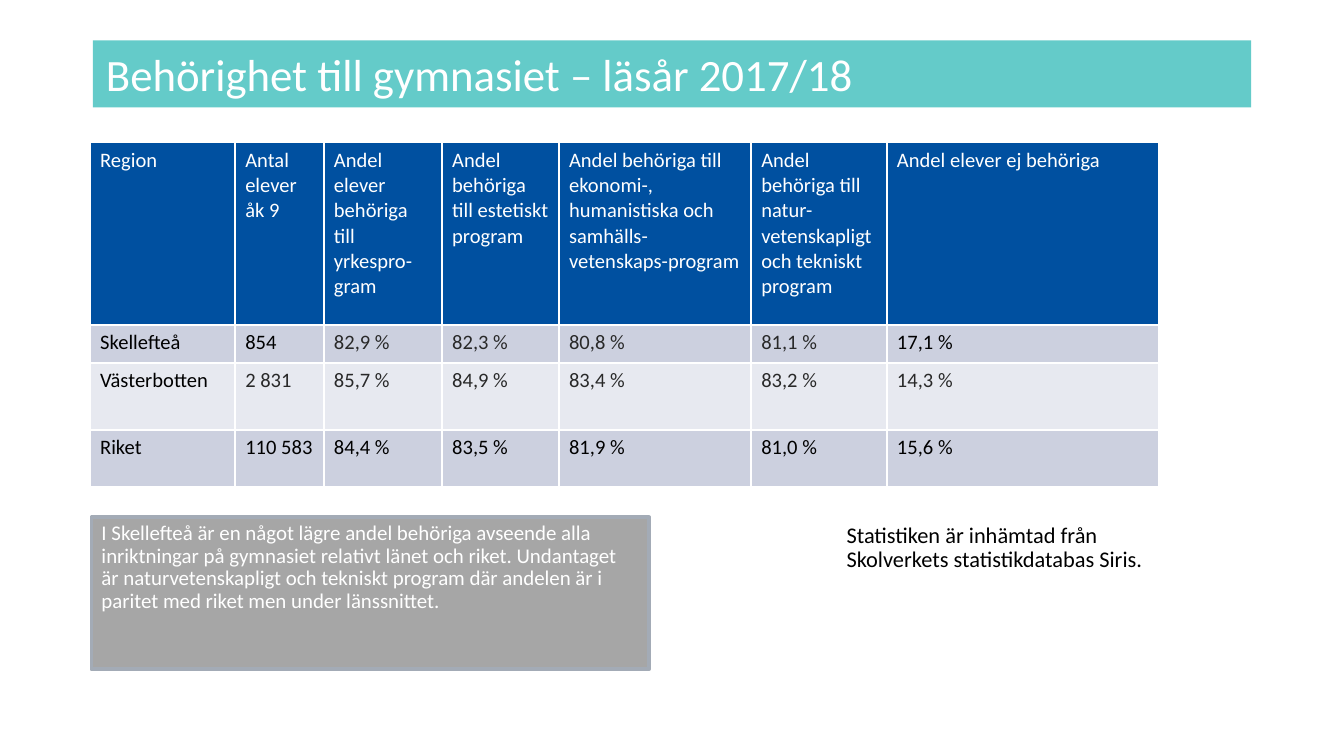
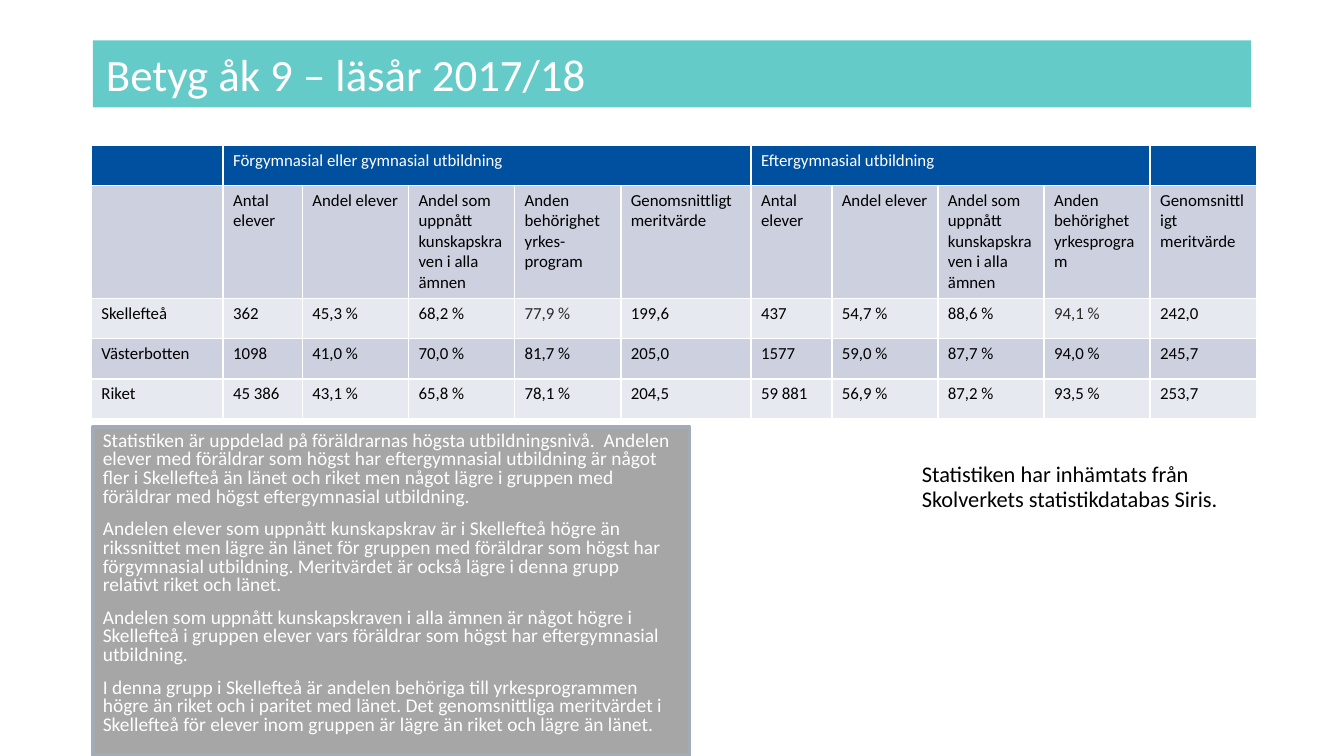
import pptx
import pptx.dml.color
import pptx.enum.shapes
import pptx.enum.text
import pptx.oxml.ns
import pptx.util
from lxml import etree

WIDTH = 10
HEIGHT = WIDTH * 9 / 16
MARGIN = 0.69
FONT = "Calibri"
COLORS = {
    "band": "64CBC9", "header": "0050A0", "odd_row": "CCD0DF", "even_row": "E7E9F0",
    "note": "A6A6A6", "note_edge": "A3ABB6", "white": "FFFFFF", "black": "000000",
    "muted": "292929",
}
INSET_POINTS = {"margin_left": 5.4, "margin_right": 5.4, "margin_top": 2.7, "margin_bottom": 2.7}
NARROW = 0.79

# "muted" lists the (row, column) cells set in the softer black.
# "spans" gives (first, last) columns merged in the header row.
SLIDES = [
    {
        "title": "Behörighet till gymnasiet – läsår 2017/18",
        "table": {
            "at": (0.67, 1.06),
            "size": 11,
            "columns": [1.08, 0.66, 0.88, 0.87, 1.43, 1.01, 2.02],
            "heights": [1.36, 0.28, 0.5, 0.42],
            "spans": [],
            "muted": [(1, c) for c in range(2, 6)] + [(2, c) for c in range(1, 7)],
            "rows": [
                ["Region", "Antal elever åk 9", "Andel elever behöriga till yrkespro-gram",
                 "Andel behöriga till estetiskt program",
                 "Andel behöriga till ekonomi-, humanistiska och samhälls-vetenskaps-program",
                 "Andel behöriga till natur-vetenskapligt och tekniskt program",
                 "Andel elever ej behöriga"],
                ["Skellefteå", "854", "82,9 %", "82,3 %", "80,8 %", "81,1 %", "17,1 %"],
                ["Västerbotten", "2 831", "85,7 %", "84,9 %", "83,4 %", "83,2 %", "14,3 %"],
                ["Riket", "110 583", "84,4 %", "83,5 %", "81,9 %", "81,0 %", "15,6 %"],
            ],
        },
        "source": {
            "at": (6.2, 3.85, 2.42, 0.74),
            "text": "Statistiken är inhämtad från Skolverkets statistikdatabas Siris.",
        },
        "note": {
            "at": (0.68, 3.85, 4.15, 1.13),
            "size": 11.2,
            "line_spacing": 0.9,
            "paragraphs": [
                "I Skellefteå är en något lägre andel behöriga avseende alla inriktningar på "
                "gymnasiet relativt länet och riket. Undantaget är naturvetenskapligt och "
                "tekniskt program där andelen är i paritet med riket men under länssnittet.",
            ],
        },
    },
    {
        "title": "Betyg åk 9 – läsår 2017/18",
        "table": {
            "at": (0.68, 1.08),
            "size": 9,
            "columns": [0.98, 0.59, *[NARROW] * 3, 0.97, 0.6, *[NARROW] * 4],
            "heights": [0.3, 0.84, 0.3, 0.3, 0.3],
            "spans": [(1, 5), (6, 9)],
            "muted": [(2, 4), (2, 9)],
            "rows": [
                ["", "Förgymnasial eller gymnasial utbildning", "", "", "", "",
                 "Eftergymnasial utbildning", "", "", "", ""],
                ["", "Antal elever", "Andel elever",
                 "Andel som uppnått kunskapskraven i alla ämnen",
                 "Anden behörighet yrkes-program", "Genomsnittligt meritvärde",
                 "Antal elever", "Andel elever",
                 "Andel som uppnått kunskapskraven i alla ämnen",
                 "Anden behörighet yrkesprogram", "Genomsnittligt meritvärde"],
                ["Skellefteå", "362", "45,3 %", "68,2 %", "77,9 %", "199,6",
                 "437", "54,7 %", "88,6 %", "94,1 %", "242,0"],
                ["Västerbotten", "1098", "41,0 %", "70,0 %", "81,7 %", "205,0",
                 "1577", "59,0 %", "87,7 %", "94,0 %", "245,7"],
                ["Riket", "45 386", "43,1 %", "65,8 %", "78,1 %", "204,5",
                 "59 881", "56,9 %", "87,2 %", "93,5 %", "253,7"],
            ],
        },
        "source": {
            "at": (6.76, 3.4, 2.59, 1.09),
            "text": "Statistiken har inhämtats från Skolverkets statistikdatabas Siris.",
        },
        "note": {
            "at": (0.69, 3.18, 4.44, 2.44),
            "size": 10.4,
            "line_spacing": 0.8,
            "paragraphs": [
                "Statistiken är uppdelad på föräldrarnas högsta utbildningsnivå.  Andelen elever "
                "med föräldrar som högst har eftergymnasial utbildning är något fler i "
                "Skellefteå än länet och riket men något lägre i gruppen med föräldrar med "
                "högst eftergymnasial utbildning.",
                "Andelen elever som uppnått kunskapskrav är i Skellefteå högre än rikssnittet "
                "men lägre än länet för gruppen med föräldrar som högst har förgymnasial "
                "utbildning. Meritvärdet är också lägre i denna grupp relativt riket och länet.",
                "Andelen som uppnått kunskapskraven i alla ämnen är något högre i Skellefteå i "
                "gruppen elever vars föräldrar som högst har eftergymnasial utbildning.",
                "I denna grupp i Skellefteå är andelen behöriga till yrkesprogrammen högre än "
                "riket och i paritet med länet. Det genomsnittliga meritvärdet i Skellefteå för "
                "elever inom gruppen är lägre än riket och lägre än länet.",
            ],
        },
    },
]


def rgb(color):
    return pptx.dml.color.RGBColor.from_string(COLORS[color])


def inches(lengths):
    return [pptx.util.Inches(length) for length in lengths]


def paint(part, color):
    part.fill.solid()
    part.fill.fore_color.rgb = rgb(color)


def set_insets(holder):
    for side, points in INSET_POINTS.items():
        setattr(holder, side, pptx.util.Pt(points))


def write(frame, paragraphs, size, color, line_spacing=None, gap=0):
    for index, text in enumerate(paragraphs):
        paragraph = frame.add_paragraph() if index else frame.paragraphs[0]
        paragraph.alignment = pptx.enum.text.PP_ALIGN.LEFT
        if line_spacing:
            paragraph.line_spacing = line_spacing
        if index:
            paragraph.space_before = pptx.util.Pt(gap)
        if not text:
            # Keeps an empty cell from growing to the default text size.
            etree.SubElement(paragraph._p, pptx.oxml.ns.qn("a:endParaRPr"), sz=str(size * 100))
            continue
        run = paragraph.add_run()
        run.text = text
        style = {"name": FONT, "size": pptx.util.Pt(size), "bold": False}
        for attribute, setting in style.items():
            setattr(run.font, attribute, setting)
        run.font.color.rgb = rgb(color)


def add_box(slide, at, fill):
    box = slide.shapes.add_shape(pptx.enum.shapes.MSO_SHAPE.RECTANGLE, *inches(at))
    box.shadow.inherit = False
    box.text_frame.word_wrap = True
    paint(box, fill)
    box.line.fill.background()
    return box


def add_title(slide, title):
    band = add_box(slide, (MARGIN, 0.3, WIDTH - 2 * MARGIN, 0.5), "band")
    band.text_frame.vertical_anchor = pptx.enum.text.MSO_ANCHOR.MIDDLE
    write(band.text_frame, [title], 24, "white")


def add_source(slide, source):
    box = slide.shapes.add_textbox(*inches(source["at"]))
    box.text_frame.word_wrap = True
    write(box.text_frame, [source["text"]], 12, "black", 0.9)


def add_note(slide, note):
    box = add_box(slide, note["at"], "note")
    box.line.color.rgb = rgb("note_edge")
    box.line.width = pptx.util.Pt(2)
    box.text_frame.vertical_anchor = pptx.enum.text.MSO_ANCHOR.TOP
    set_insets(box.text_frame)
    # The wider right inset keeps the line breaks in place.
    box.text_frame.margin_right = pptx.util.Pt(7.5)
    write(box.text_frame, note["paragraphs"], note["size"], "white", note["line_spacing"], 7.5)


def add_borders(cell):
    properties = cell._tc.get_or_add_tcPr()
    for side in "LRTB":
        edge = etree.SubElement(properties, pptx.oxml.ns.qn(f"a:ln{side}"),
                                w=str(pptx.util.Pt(1)))
        fill = etree.SubElement(edge, pptx.oxml.ns.qn("a:solidFill"))
        etree.SubElement(fill, pptx.oxml.ns.qn("a:srgbClr"), val=COLORS["white"])


def add_statistics(slide, statistics):
    rows, columns, heights = (statistics[key] for key in ("rows", "columns", "heights"))
    extent = (sum(columns), sum(heights))
    table = slide.shapes.add_table(
        len(rows), len(columns), *inches(statistics["at"] + extent)).table
    table.first_row = table.horz_banding = False
    for column, width in zip(table.columns, inches(columns)):
        column.width = width
    for row, height in zip(table.rows, inches(heights)):
        row.height = height
    for first, last in statistics["spans"]:
        table.cell(0, first).merge(table.cell(0, last))
    for r, row in enumerate(rows):
        for c, text in enumerate(row):
            cell = table.cell(r, c)
            set_insets(cell)
            add_borders(cell)
            paint(cell, ("odd_row" if r % 2 else "even_row") if r else "header")
            color = "muted" if (r, c) in statistics["muted"] else "black"
            write(cell.text_frame, [text], statistics["size"], color if r else "white")


def main():
    deck = pptx.Presentation()
    deck.slide_width, deck.slide_height = inches((WIDTH, HEIGHT))
    for content in SLIDES:
        slide = deck.slides.add_slide(deck.slide_layouts[6])
        add_title(slide, content["title"])
        add_statistics(slide, content["table"])
        add_source(slide, content["source"])
        add_note(slide, content["note"])
    deck.save("out.pptx")


if __name__ == "__main__":
    main()
